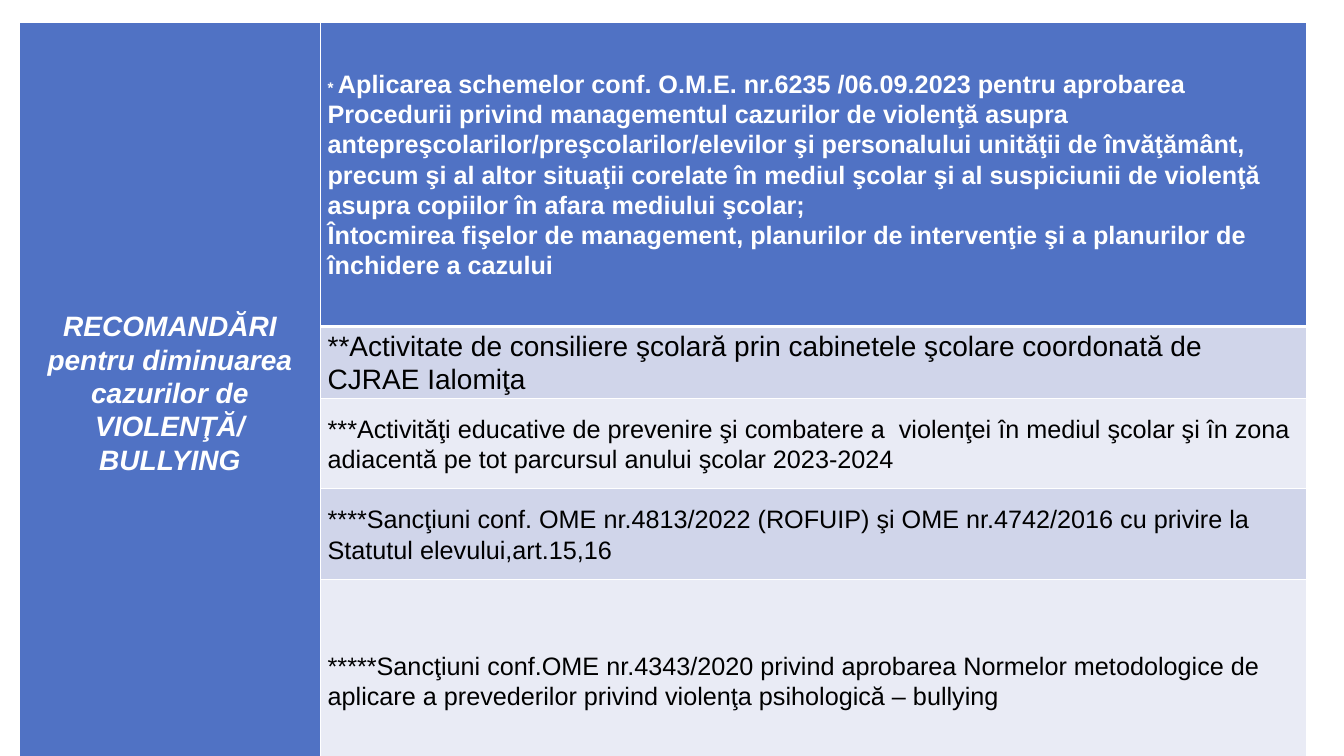
from lxml import etree
from pptx import Presentation
from pptx.dml.color import RGBColor
from pptx.enum.text import MSO_ANCHOR, PP_ALIGN
from pptx.oxml.ns import qn
from pptx.util import Emu, Pt

CENTER, LEFT = PP_ALIGN.CENTER, PP_ALIGN.LEFT
MIDDLE = MSO_ANCHOR.MIDDLE
PX = 9144
BLUE, LAVENDER, PALE = "5072C4", "D0D5EA", "E9EBF5"
WHITE, BLACK = "FFFFFF", "000000"

TOPIC = ["RECOMANDĂRI pentru diminuarea cazurilor de VIOLENŢĂ/", "BULLYING"]
PROCEDURE = [
    "Aplicarea schemelor conf. O.M.E. nr.6235 /06.09.2023 pentru aprobarea "
    "Procedurii privind managementul cazurilor de violenţă asupra "
    "antepreşcolarilor/preşcolarilor/elevilor şi personalului unităţii de "
    "învăţământ, precum şi al altor situaţii corelate în mediul şcolar şi al "
    "suspiciunii de violenţă asupra copiilor în afara mediului şcolar;",
    "Întocmirea fişelor de management, planurilor de intervenţie şi a "
    "planurilor de închidere a cazului",
]
MEASURES = [
    ("**Activitate de consiliere şcolară prin cabinetele şcolare coordonată "
     "de CJRAE Ialomiţa", 20),
    ("***Activităţi educative de prevenire şi combatere a  violenţei în mediul "
     "şcolar şi în zona adiacentă pe tot parcursul anului şcolar 2023-2024", 18),
    ("****Sancţiuni conf. OME nr.4813/2022 (ROFUIP) şi OME nr.4742/2016 cu "
     "privire la Statutul elevului,art.15,16", 18),
    ("*****Sancţiuni conf.OME nr.4343/2020 privind aprobarea Normelor "
     "metodologice de aplicare a prevederilor privind violenţa psihologică – "
     "bullying", 18),
]


def px(length):
    return Emu(length * PX)


def rgb(color):
    return RGBColor.from_string(color)


class SlideBuilder:
    font = "Arial"
    line_spacing = 1.07

    def __init__(self, deck):
        self.slide = deck.slides.add_slide(deck.slide_layouts[6])

    def table(self, left, top, widths, heights):
        frame = self.slide.shapes.add_table(
            len(heights), len(widths), px(left), px(top),
            px(sum(widths)), px(sum(heights)))
        grid = frame.table
        grid.first_row = grid.horz_banding = False
        for column, width in zip(grid.columns, widths):
            column.width = px(width)
        for row, height in zip(grid.rows, heights):
            row.height = px(height)
        return grid

    def cell(self, cell, fill, top=1, bottom=1):
        properties = cell._tc.get_or_add_tcPr()
        for side, points in (("L", 1), ("R", 1), ("T", top), ("B", bottom)):
            border = etree.SubElement(
                properties, qn(f"a:ln{side}"), w=str(Pt(points)))
            paint = etree.SubElement(border, qn("a:solidFill"))
            etree.SubElement(paint, qn("a:srgbClr"), val=WHITE)
        cell.fill.solid()
        cell.fill.fore_color.rgb = rgb(fill)
        cell.vertical_anchor = MIDDLE
        cell.margin_left = cell.margin_right = px(7)
        cell.margin_top = cell.margin_bottom = 0

    def text(self, cell, lines, size, color, bold=False, italic=False,
             align=LEFT, marker=None):
        frame = cell.text_frame
        for index, line in enumerate(lines):
            paragraph = frame.add_paragraph() if index else frame.paragraphs[0]
            if marker and not index:
                star = paragraph.add_run()
                star.text, star.font.size = marker, Pt(11)
            paragraph.add_run().text = line
            paragraph.alignment = align
            paragraph.line_spacing = self.line_spacing
            font = paragraph.font
            font.name, font.size = self.font, Pt(size)
            font.bold, font.italic = bold, italic
            font.color.rgb = rgb(color)


def main():
    deck = Presentation()
    deck.slide_width, deck.slide_height = px(1333), px(750)
    builder = SlideBuilder(deck)
    grid = builder.table(19, 22, [299, 978], [302, 71, 90, 90, 200])

    for row in range(len(grid.rows)):
        builder.cell(grid.cell(row, 0), BLUE)
    topic = grid.cell(0, 0)
    topic.merge(grid.cell(len(grid.rows) - 1, 0))
    topic.margin_bottom = px(18)
    builder.text(topic, TOPIC, 20, WHITE, bold=True, italic=True, align=CENTER)

    procedure = grid.cell(0, 1)
    builder.cell(procedure, BLUE, bottom=3)
    builder.text(procedure, PROCEDURE, 18, WHITE, bold=True, marker="* ")

    for row, (measure, size) in enumerate(MEASURES, 1):
        cell = grid.cell(row, 1)
        builder.cell(cell, LAVENDER if row % 2 else PALE,
                     top=3 if row == 1 else 1)
        builder.text(cell, [measure], size, BLACK)

    deck.save("out.pptx")


if __name__ == "__main__":
    main()
